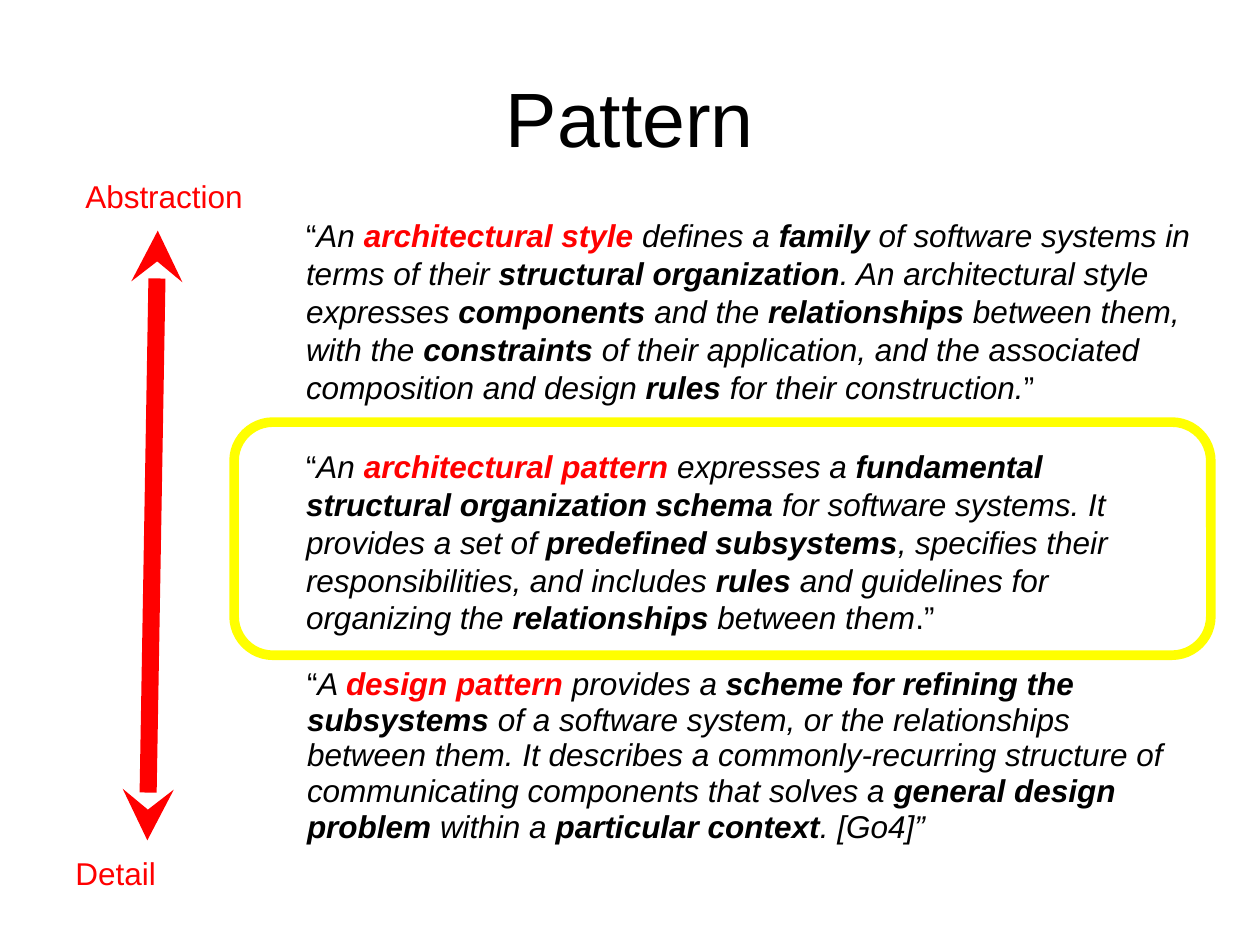
import typing

import lxml.etree
import pptx
import pptx.dml.color
import pptx.enum.shapes
import pptx.enum.text
import pptx.oxml.ns
import pptx.util

Cm = pptx.util.Cm
Pt = pptx.util.Pt
FONT = "Arial"
COLOURS = {"ink": "000000", "key": "FF0000", "frame": "FFFF00", "page": "FFFFFF"}


class Box(typing.NamedTuple):
    left: float
    top: float
    width: float
    height: float


class Label(typing.NamedTuple):
    text: str
    box: Box
    size: int = 18
    colour: str = "key"
    centred: bool = False


class Quote(typing.NamedTuple):
    """A definition; asterisks enclose its bold parts, the first being the term."""
    text: str
    close: str
    box: Box
    spacing: float = 1.0


LABELS = [
    Label("Pattern", Box(1.27, 0.76, 22.86, 3.18), 44, "ink", True),
    Label("Abstraction", Box(1.47, 3.45, 3.94, 1.02)),
    Label("Detail", Box(1.27, 17.09, 4.14, 1.8)),
]
QUOTES = [
    Quote(
        "An *architectural style *defines a *family* of software systems in terms of "
        "their *structural organization*. An architectural style expresses "
        "*components* and the *relationships* between them, with the *constraints* of "
        "their application, and the associated composition and design *rules* for "
        "their construction.",
        "”", Box(5.92, 4.24, 18.42, 4.11)),
    Quote(
        "An *architectural pattern *expresses a *fundamental structural organization "
        "schema* for software systems. It provides a set of *predefined subsystems*, "
        "specifies their responsibilities, and includes *rules* and guidelines for "
        "organizing the *relationships* between them",
        ".”", Box(5.92, 8.89, 17.98, 4.19)),
    Quote(
        "A *design pattern *provides a *scheme for refining the subsystems* of a "
        "software system, or the relationships between them. It describes a "
        "commonly-recurring structure of communicating components that solves a "
        "*general design problem* within a *particular context*. [Go4]”",
        "", Box(5.94, 13.31, 18.42, 3.91), 0.95),
]
FRAME = Box(4.72, 8.51, 19.69, 4.7)
DETAIL_END = (2.97, 16.94)
ABSTRACT_END = (3.18, 4.65)


def rgb(name: str) -> pptx.dml.color.RGBColor:
    return pptx.dml.color.RGBColor.from_string(COLOURS[name])


def style(run, size: int, colour: str, bold: bool = False, slant: bool = False) -> None:
    font = run.font
    font.name, font.size = FONT, Pt(size)
    font.bold, font.italic = bold, slant
    font.color.rgb = rgb(colour)


def add_frame(slide, box: Box):
    """Add a wrapping text box and return its text frame."""
    frame = slide.shapes.add_textbox(*map(Cm, box)).text_frame
    frame.word_wrap = True
    return frame


def draw_label(slide, label: Label) -> None:
    frame = add_frame(slide, label.box)
    frame.text = label.text
    line = frame.paragraphs[0]
    if label.centred:
        frame.vertical_anchor = pptx.enum.text.MSO_ANCHOR.MIDDLE
        line.alignment = pptx.enum.text.PP_ALIGN.CENTER
    style(line.runs[0], label.size, label.colour)


def draw_quote(slide, quote: Quote) -> None:
    line = add_frame(slide, quote.box).paragraphs[0]
    line.line_spacing = quote.spacing

    def add(text: str, colour: str = "ink", bold: bool = False, slant: bool = False) -> None:
        run = line.add_run()
        run.text = text
        style(run, 18, colour, bold, slant)

    add("“")
    for i, part in enumerate(quote.text.split("*")):
        add(part, "key" if i == 1 else "ink", bold=i % 2 == 1, slant=True)
    if quote.close:
        add(quote.close)


def draw_arrow(slide) -> None:
    arrow = slide.shapes.add_connector(
        pptx.enum.shapes.MSO_CONNECTOR.STRAIGHT, *map(Cm, DETAIL_END + ABSTRACT_END))
    arrow.line.width = Pt(9.75)
    arrow.line.color.rgb = rgb("key")
    qn = pptx.oxml.ns.qn
    props = arrow.element.spPr
    stroke = props.find(qn("a:ln"))
    for end in ("a:headEnd", "a:tailEnd"):
        lxml.etree.SubElement(stroke, qn(end), type="stealth")
    lxml.etree.SubElement(props, qn("a:effectLst"))


def draw_frame(slide) -> None:
    shape = slide.shapes.add_shape(
        pptx.enum.shapes.MSO_SHAPE.ROUNDED_RECTANGLE, *map(Cm, FRAME))
    shape.shadow.inherit = False
    shape.fill.background()
    shape.line.color.rgb = rgb("frame")
    shape.line.width = Pt(5.5)


def main() -> None:
    deck = pptx.Presentation()
    deck.slide_width, deck.slide_height = Cm(25.4), Cm(19.05)
    slide = deck.slides.add_slide(deck.slide_layouts[6])
    slide.background.fill.solid()
    slide.background.fill.fore_color.rgb = rgb("page")
    draw_arrow(slide)
    for label in LABELS:
        draw_label(slide, label)
    for quote in QUOTES:
        draw_quote(slide, quote)
    draw_frame(slide)
    deck.save("out.pptx")


if __name__ == "__main__":
    main()
